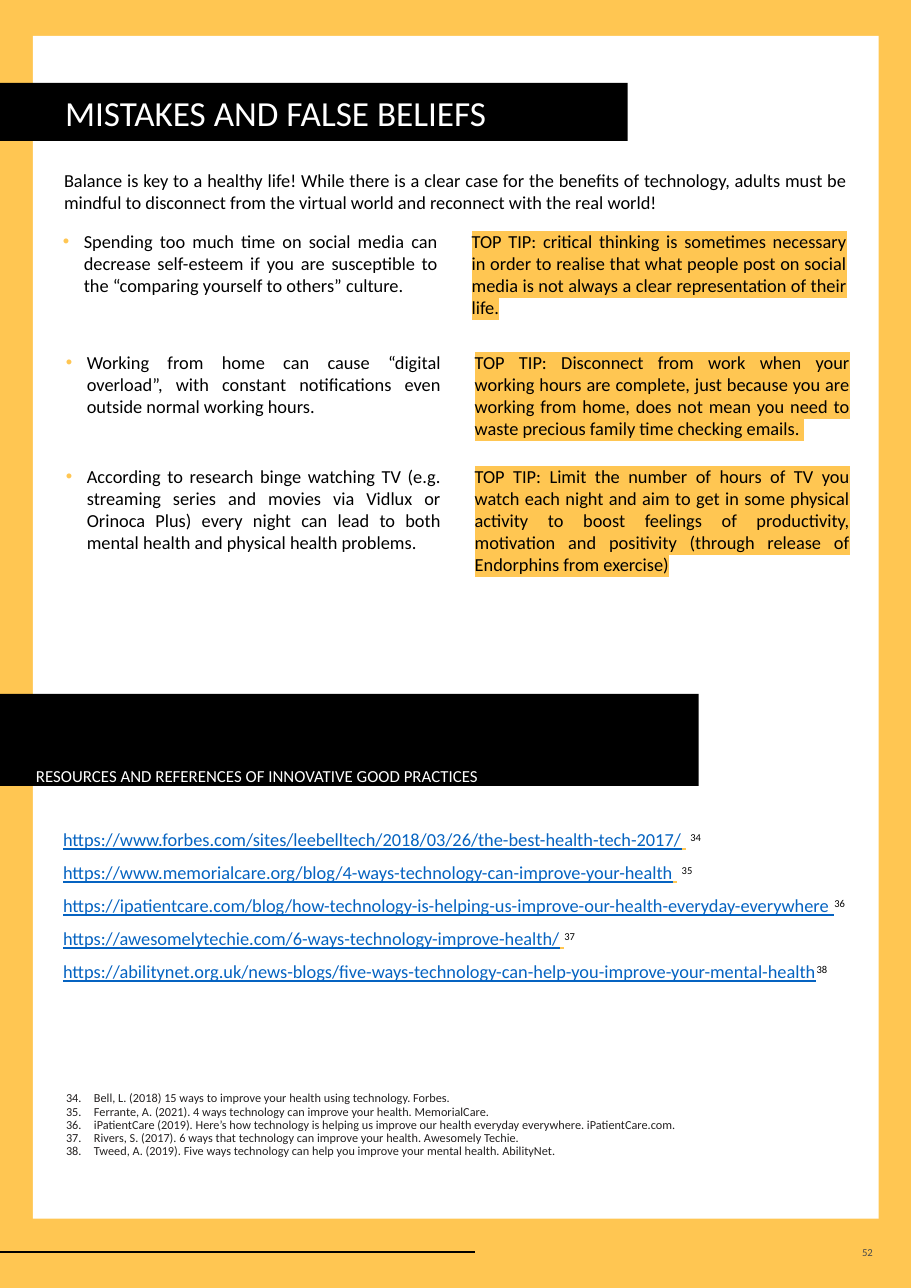
from dataclasses import dataclass
from typing import Optional

from lxml.etree import SubElement
from pptx import Presentation
from pptx.dml.color import RGBColor
from pptx.enum.shapes import MSO_CONNECTOR, MSO_SHAPE
from pptx.enum.text import MSO_ANCHOR as Anchor, MSO_AUTO_SIZE, PP_ALIGN as Align
from pptx.oxml.ns import qn
from pptx.util import Emu, Inches, Pt

EMU_PER_PX = 8298
FONT = "Calibri"
YELLOW, WHITE, BLACK = "FFC652", "FFFFFF", "000000"
LINK_BLUE, NOTE_GREY, PAGE_GREY = "0563C1", "221F1F", "4B4B4B"
INSET = 11
COLUMN_WIDTH, COLUMN_STEP = 397, 409
FIRST_NOTE = 34


@dataclass(frozen=True)
class Mistake:
    left: int
    top: int
    belief: str
    tip: str


@dataclass(frozen=True)
class Link:
    url: str
    underlined_gap: str = ""
    plain_gap: str = ""


MISTAKES = [
    Mistake(52, 225,
            "Spending too much time on social media can decrease self-esteem if you are "
            "susceptible to the “comparing yourself to others” culture.",
            "TOP TIP: critical thinking is sometimes necessary in order to realise that what "
            "people post on social media is not always a clear representation of their life."),
    Mistake(55, 346,
            "Working from home can cause “digital overload”, with constant notifications even "
            "outside normal working hours.",
            "TOP TIP: Disconnect from work when your working hours are complete, just because "
            "you are working from home, does not mean you need to waste precious family time "
            "checking emails. "),
    Mistake(55, 460,
            "According to research binge watching TV (e.g. streaming series and movies via "
            "Vidlux or Orinoca Plus) every night can lead to both mental health and physical "
            "health problems.",
            "TOP TIP: Limit the number of hours of TV you watch each night and aim to get in "
            "some physical activity to boost feelings of productivity, motivation and "
            "positivity (through release of Endorphins from exercise)"),
]
LINKS = [
    Link("https://www.forbes.com/sites/leebelltech/2018/03/26/the-best-health-tech-2017/", " ", " "),
    Link("https://www.memorialcare.org/blog/4-ways-technology-can-improve-your-health", " ", " "),
    Link("https://ipatientcare.com/blog/how-technology-is-helping-us-improve-our-health-everyday-everywhere "),
    Link("https://awesomelytechie.com/6-ways-technology-improve-health/", " "),
    Link("https://abilitynet.org.uk/news-blogs/five-ways-technology-can-help-you-improve-your-mental-health"),
]
REFERENCES = [
    "Bell, L. (2018) 15 ways to improve your health using technology. Forbes.",
    "Ferrante, A. (2021). 4 ways technology can improve your health. MemorialCare.",
    "iPatientCare (2019). Here’s how technology is helping us improve our health everyday "
    "everywhere. iPatientCare.com.",
    "Rivers, S. (2017). 6 ways that technology can improve your health. Awesomely Techie.",
    "Tweed, A. (2019). Five ways technology can help you improve your mental health. AbilityNet.",
]


def px(length: int) -> Emu:
    return Emu(length * EMU_PER_PX)


def rgb(colour: str) -> RGBColor:
    return RGBColor.from_string(colour)


def place(shape, left: int, top: int, width: int, height: int) -> None:
    shape.left, shape.top, shape.width, shape.height = map(px, (left, top, width, height))


def prepare_frame(frame, anchor=Anchor.TOP) -> None:
    frame.word_wrap = True
    frame.auto_size = MSO_AUTO_SIZE.NONE
    frame.vertical_anchor = anchor


def fill_solid(shape, colour: str) -> None:
    shape.fill.solid()
    shape.fill.fore_color.rgb = rgb(colour)


def format_run(run, size: float, colour: str, underline: bool = False) -> None:
    font = run.font
    font.name, font.size, font.bold, font.underline = FONT, Pt(size), False, underline
    font.color.rgb = rgb(colour)


def format_paragraph(paragraph, align=Align.LEFT, margin: int = 0, hanging: int = 0,
                     bullet: str = "buNone", spacing: float = 1.0, **bullet_values: str) -> None:
    properties = paragraph._p.get_or_add_pPr()
    properties.set("marL", str(px(margin)))
    properties.set("indent", str(px(-hanging)))
    if bullet == "buChar":
        SubElement(SubElement(properties, qn("a:buClr")), qn("a:srgbClr")).set("val", YELLOW)
        SubElement(properties, qn("a:buFont")).set("typeface", "Arial")
    SubElement(properties, qn(f"a:{bullet}"), bullet_values)
    paragraph.alignment = align
    paragraph.line_spacing = spacing
    paragraph.space_before = paragraph.space_after = Pt(0)


def write_line(frame, text: str, size: float, colour: str, **paragraph_format) -> None:
    frame.text = text
    paragraph = frame.paragraphs[0]
    format_paragraph(paragraph, **paragraph_format)
    format_run(paragraph.runs[0], size, colour)


def add_text(slide, left: int, top: int, width: int, height: int, anchor=Anchor.TOP):
    frame = slide.shapes.add_textbox(*map(px, (left, top, width, height))).text_frame
    prepare_frame(frame, anchor)
    return frame


def highlight(run, colour: str) -> None:
    mark = SubElement(run._r.get_or_add_rPr(), qn("a:highlight"))
    SubElement(mark, qn("a:srgbClr")).set("val", colour)
    run._r.rPr.find(qn("a:solidFill")).addnext(mark)


def add_page(slide) -> None:
    """Put the white page on the yellow background, behind the placeholders."""
    fill_solid(slide.background, YELLOW)
    page = slide.shapes.add_shape(MSO_SHAPE.RECTANGLE, px(33), px(36), px(846), px(1183))
    page.shadow.inherit = False
    fill_solid(page, WHITE)
    page.line.fill.background()
    page.element.getparent().insert(2, page.element)


def add_footer(slide) -> None:
    rule = slide.shapes.add_connector(MSO_CONNECTOR.STRAIGHT, 0, px(1252), px(475), px(1252))
    rule.line.color.rgb = rgb(BLACK)
    rule.line.width = Pt(1.5)
    SubElement(rule.element.spPr, qn("a:effectLst"))
    number = add_text(slide, 765, 1243, 119, 18, Anchor.MIDDLE)
    number.margin_top = number.margin_bottom = 0
    write_line(number, "52", 7, PAGE_GREY, align=Align.RIGHT)


def add_mistake(slide, mistake: Mistake) -> None:
    belief = add_text(slide, mistake.left, mistake.top, COLUMN_WIDTH, 96)
    write_line(belief, mistake.belief, 12, BLACK, align=Align.JUSTIFY,
               margin=21, hanging=21, bullet="buChar", char="•")
    tip = add_text(slide, mistake.left + COLUMN_STEP, mistake.top, COLUMN_WIDTH, 96)
    write_line(tip, mistake.tip, 12, BLACK, align=Align.JUSTIFY)
    highlight(tip.paragraphs[0].runs[0], YELLOW)


def write_links(frame) -> None:
    for index, link in enumerate(LINKS):
        paragraph = frame.add_paragraph() if index else frame.paragraphs[0]
        format_paragraph(paragraph, spacing=1.5)
        pieces = [(link.url, LINK_BLUE, True), (link.underlined_gap, YELLOW, True),
                  (link.plain_gap, YELLOW, False), (str(FIRST_NOTE + index), BLACK, False)]
        for text, colour, underline in pieces:
            if text:
                run = paragraph.add_run()
                run.text = text
                format_run(run, 12, colour, underline)
        run._r.get_or_add_rPr().set("baseline", "30000")


def write_references(frame) -> None:
    frame.text = "\n".join(REFERENCES)
    for paragraph in frame.paragraphs:
        format_paragraph(paragraph, margin=28, hanging=28, spacing=0.9, bullet="buAutoNum",
                         type="arabicPeriod", startAt=str(FIRST_NOTE))
        format_run(paragraph.runs[0], 8, NOTE_GREY)


def main() -> None:
    deck = Presentation()
    deck.slide_width, deck.slide_height = Inches(8.27), Inches(11.69)
    slide = deck.slides.add_slide(deck.slide_layouts.get_by_name("Comparison"))
    heading, resources, links, intro, references = slide.placeholders

    add_page(slide)
    place(heading, 0, 83, 628, 58)
    place(resources, 0, 694, 699, 92)
    place(links, 52, 812, 806, 187)
    place(intro, 53, 164, 806, 60)
    place(references, 55, 1087, 799, 100)
    for band in (heading, resources):
        fill_solid(band, BLACK)
    for block in (links, intro, references):
        prepare_frame(block.text_frame)

    prepare_frame(heading.text_frame, Anchor.MIDDLE)
    write_line(heading.text_frame, "MISTAKES AND FALSE BELIEFS", 23, WHITE, margin=54)
    prepare_frame(resources.text_frame, Anchor.BOTTOM)
    resources.text_frame.margin_bottom = 0
    write_line(resources.text_frame, "RESOURCES AND REFERENCES OF INNOVATIVE GOOD PRACTICES",
               11, WHITE, margin=25)
    write_line(intro.text_frame,
               "Balance is key to a healthy life! While there is a clear case for the benefits of "
               "technology, adults must be mindful to disconnect from the virtual world and "
               "reconnect with the real world!", 12, BLACK, align=Align.JUSTIFY)
    for mistake in MISTAKES:
        add_mistake(slide, mistake)
    write_links(links.text_frame)
    write_references(references.text_frame)
    add_footer(slide)
    deck.save("out.pptx")


if __name__ == "__main__":
    main()
